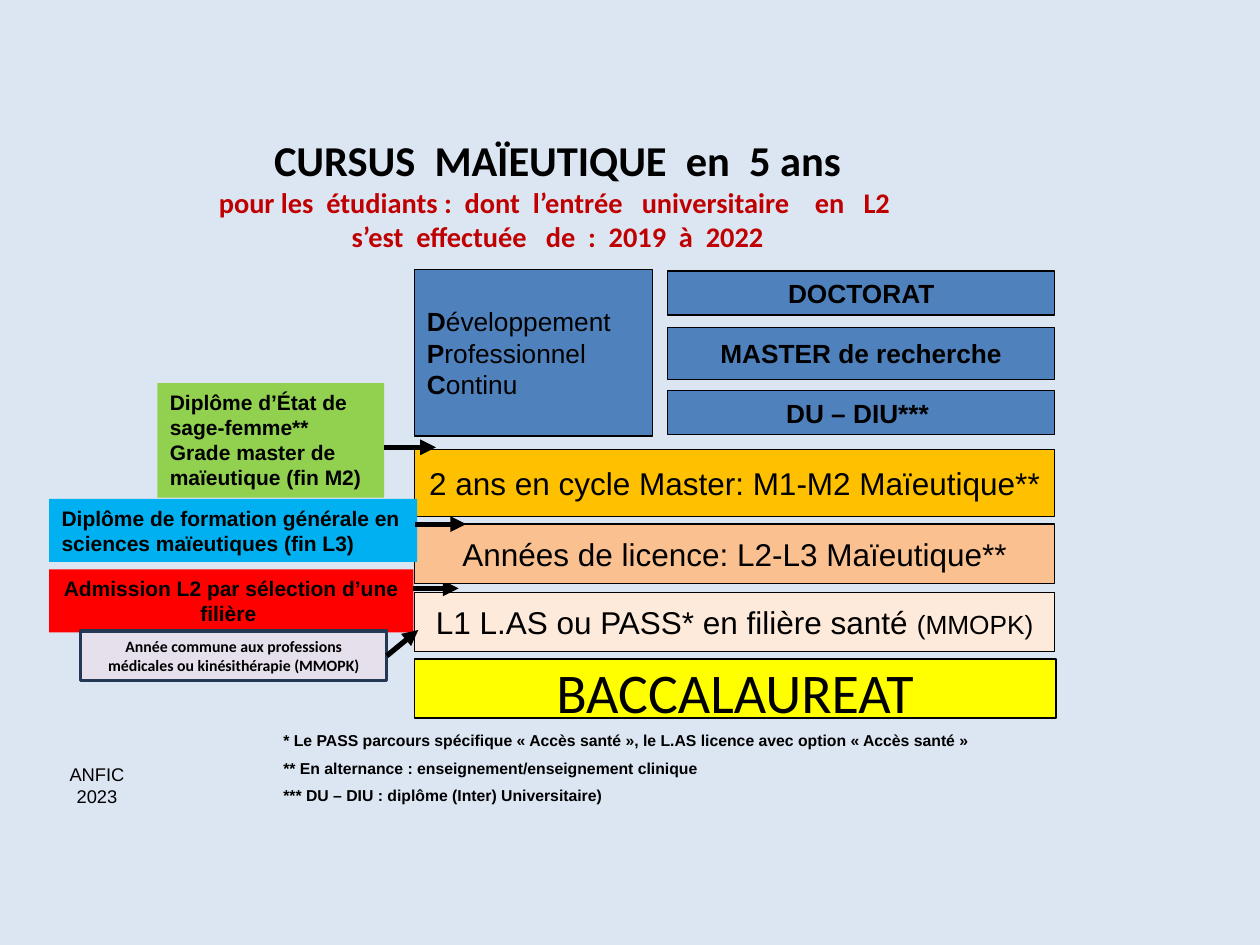
from lxml import etree
from pptx import Presentation
from pptx.dml.color import RGBColor
from pptx.enum.shapes import MSO_CONNECTOR, MSO_SHAPE
from pptx.enum.text import MSO_ANCHOR, PP_ALIGN
from pptx.oxml.ns import qn
from pptx.util import Inches, Pt

RECTANGLE = MSO_SHAPE.RECTANGLE
STRAIGHT = MSO_CONNECTOR.STRAIGHT
TOP, MIDDLE = MSO_ANCHOR.TOP, MSO_ANCHOR.MIDDLE
LEFT, CENTER = PP_ALIGN.LEFT, PP_ALIGN.CENTER
RIGHT_SIDE = 3

COLUMNS, ROWS = 100, 75
BLACK, BLUE, DARK_RED = "000000", "4F81BD", "C00000"
STAIR_LEFT, STAIR_WIDTH = 32.9, 50.8
RESEARCH_LEFT, RESEARCH_WIDTH = 53, 30.7


def color(value):
    return RGBColor.from_string(value)


class Page:
    """The current slide and its style; positions are in grid columns and rows."""

    def __init__(self, deck, background):
        self.column = deck.slide_width / COLUMNS
        self.row = deck.slide_height / ROWS
        self.slide = deck.slides.add_slide(deck.slide_layouts[6])
        fill = self.slide.background.fill
        fill.solid()
        fill.fore_color.rgb = color(background)

    def place(self, *values):
        """Turn alternating columns and rows into slide lengths."""
        units = (self.column, self.row) * 2
        return [round(value * unit) for value, unit in zip(values, units)]

    def set_text(self, shape, paragraphs, size, font="Arial", bold=False, align=CENTER,
                 anchor=MIDDLE, wrap=True, gap=0, spacing=None):
        """Each paragraph is a string or a list of (text, font changes) spans."""
        frame = shape.text_frame
        frame.word_wrap = wrap
        frame.vertical_anchor = anchor
        for index, content in enumerate(paragraphs):
            para = frame.add_paragraph() if index else frame.paragraphs[0]
            para.alignment = align
            para.line_spacing = spacing
            para.space_before = Pt(gap if index else 0)
            para.font.name, para.font.size, para.font.bold = font, Pt(size), bold
            para.font.color.rgb = color(BLACK)
            if isinstance(content, str):
                content = [(content, {})]
            for text, changes in content:
                self.add_span(para, text, **changes)

    def add_span(self, para, text, size=None, bold=None, ink=None):
        for index, line in enumerate(text.split("\n")):
            if index:
                para.add_line_break()
            if not line:
                continue
            span = para.add_run()
            span.text = line
            span.font.bold = bold
            if size:
                span.font.size = Pt(size)
            if ink:
                span.font.color.rgb = color(ink)

    def text(self, area, paragraphs, size, **style):
        box = self.slide.shapes.add_textbox(*self.place(*area))
        self.set_text(box, paragraphs, size, **style)

    def box(self, area, fill, paragraphs, size, line=BLACK, weight=0.75, **style):
        box = self.slide.shapes.add_shape(RECTANGLE, *self.place(*area))
        box.shadow.inherit = False
        box.fill.solid()
        box.fill.fore_color.rgb = color(fill)
        if line:
            box.line.color.rgb = color(line)
            box.line.width = Pt(weight)
        else:
            box.line.fill.background()
        self.set_text(box, paragraphs, size, **style)
        return box

    def label(self, area, fill, paragraphs, align=LEFT):
        self.box(area, fill, paragraphs, 12, line=None, bold=True, align=align, anchor=TOP)

    def step(self, top, height, fill, content):
        self.box((STAIR_LEFT, top, STAIR_WIDTH, height), fill, [content], 18, wrap=False)

    def arrow(self, start, end, source=None):
        arrow = self.slide.shapes.add_connector(STRAIGHT, *self.place(*start, *end))
        if source:
            arrow.begin_connect(source, RIGHT_SIDE)
        arrow.line.color.rgb = color(BLACK)
        arrow.line.width = Pt(3)
        properties = arrow._element.spPr
        etree.SubElement(properties.find(qn("a:ln")), qn("a:tailEnd"), type="triangle")
        etree.SubElement(properties, qn("a:effectLst"))


def main():
    deck = Presentation()
    deck.slide_width, deck.slide_height = Inches(10), Inches(7.5)
    page = Page(deck, "DCE6F2")

    page.text((4.7, 10.7, 79.1, 9.3), [[
        ("CURSUS  MAÏEUTIQUE  en  5 ans\n", {}),
        ("pour les  étudiants :  dont  l’entrée   universitaire    en   L2 \n"
         "s’est  effectuée   de  :  2019  à  2022", {"size": 16.2, "ink": DARK_RED}),
    ]], 24.3, font="Calibri", bold=True)

    # Years of study, from the school diploma upwards, with entry and exit diplomas
    page.box((STAIR_LEFT, 52.3, 50.9, 4.7), "FFFF00", ["BACCALAUREAT"], 32,
             font="Calibri", anchor=TOP, spacing=0.9)
    page.step(47, 4.7, "FDEADA", [("L1 L.AS ou PASS* en filière santé ", {}),
                                  ("(MMOPK)", {"size": 15})])
    page.label((3.9, 45.2, 28.9, 5), "FF0000",
               ["Admission L2 par sélection d’une filière "], align=CENTER)
    page.arrow((32.8, 46.7), (36.4, 46.7))
    page.step(41.6, 4.7, "FAC090", "Années de licence: L2-L3 Maïeutique**")
    page.step(35.7, 5.3, "FFC000", "2 ans en cycle Master: M1-M2 Maïeutique**")
    page.label((12.5, 30.4, 18, 9.1), "92D050",
               ["Diplôme d’État de sage-femme**", "Grade master de maïeutique (fin M2)"])
    page.arrow((30.5, 35.5), (34.6, 35.5))

    # After the diploma: continuing education and research
    words = ("Développement", "Professionnel", "Continu")
    page.box((STAIR_LEFT, 21.4, 18.9, 13.2), BLUE,
             [[(word[0], {"bold": True}), (word[1:], {})] for word in words],
             15, align=LEFT, wrap=False)
    for top, height, name in ((31, 3.5, "DU – DIU*** "),
                              (26, 4.1, "MASTER de recherche"),
                              (21.5, 3.5, "DOCTORAT")):
        page.box((RESEARCH_LEFT, top, RESEARCH_WIDTH, height), BLUE, [name], 15,
                 bold=True, wrap=False)

    page.label((3.9, 39.6, 29.2, 5), "00B0F0",
               ["Diplôme de formation générale en sciences maïeutiques (fin L3)"])
    page.arrow((32.9, 41.6), (37, 41.6))

    page.text((21.5, 57.5, 68.2, 7.1), [
        "* Le PASS parcours spécifique « Accès santé », le L.AS licence avec option « Accès santé »",
        "** En alternance : enseignement/enseignement clinique",
        "*** DU – DIU : diplôme (Inter) Universitaire)",
    ], 9, bold=True, align=LEFT, anchor=TOP, gap=5)
    page.text((2.9, 61.3, 9.6, 2), ["ANFIC 2023"], 10.5)

    common_year = page.box(
        (6.4, 50.1, 24.3, 3.9), "E6E0EC",
        ["Année commune aux professions médicales ou kinésithérapie (MMOPK)"],
        9, line="233953", weight=2, font="Calibri", bold=True)
    page.arrow((30.7, 52.1), (33.2, 50), source=common_year)

    deck.save("out.pptx")


if __name__ == "__main__":
    main()
